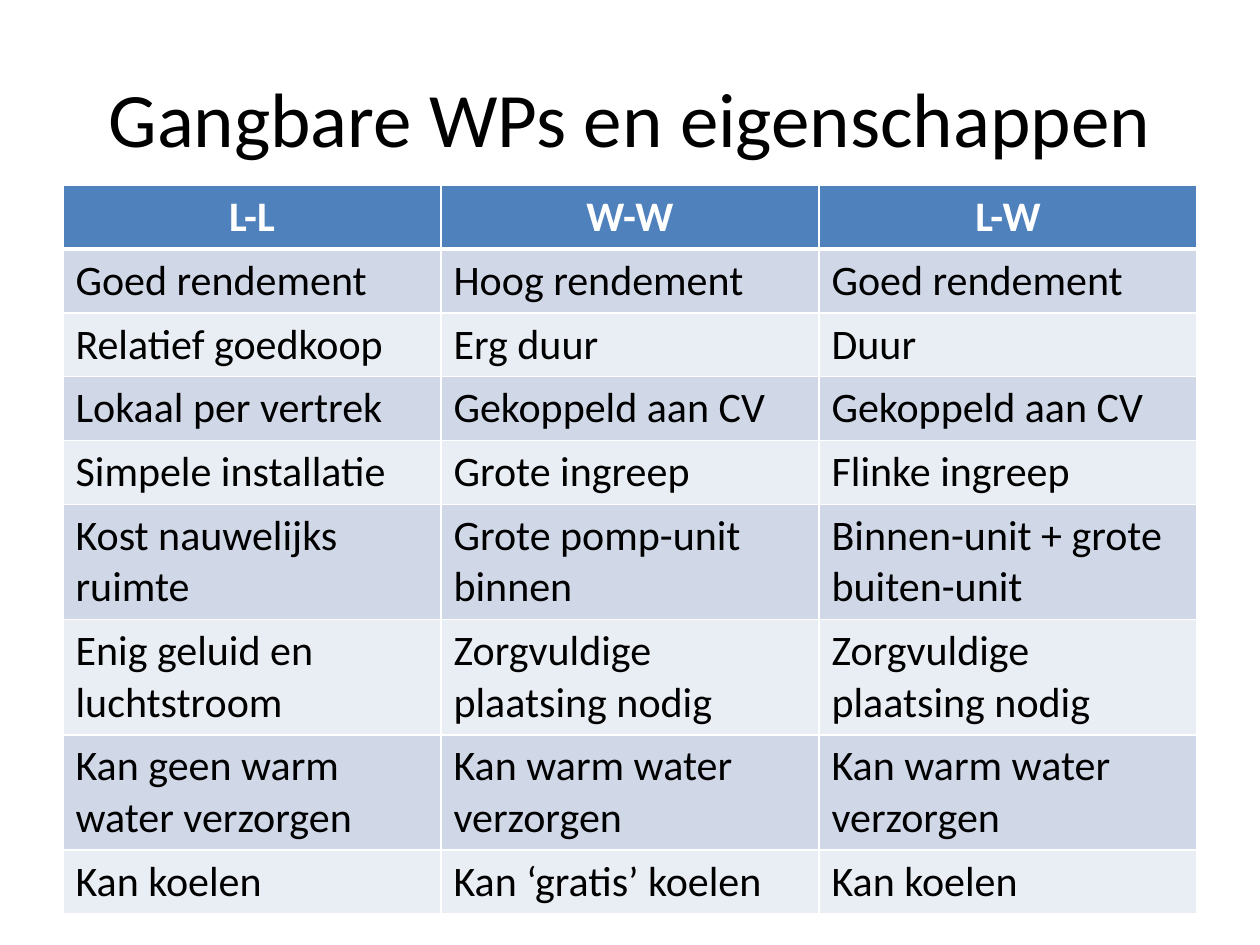
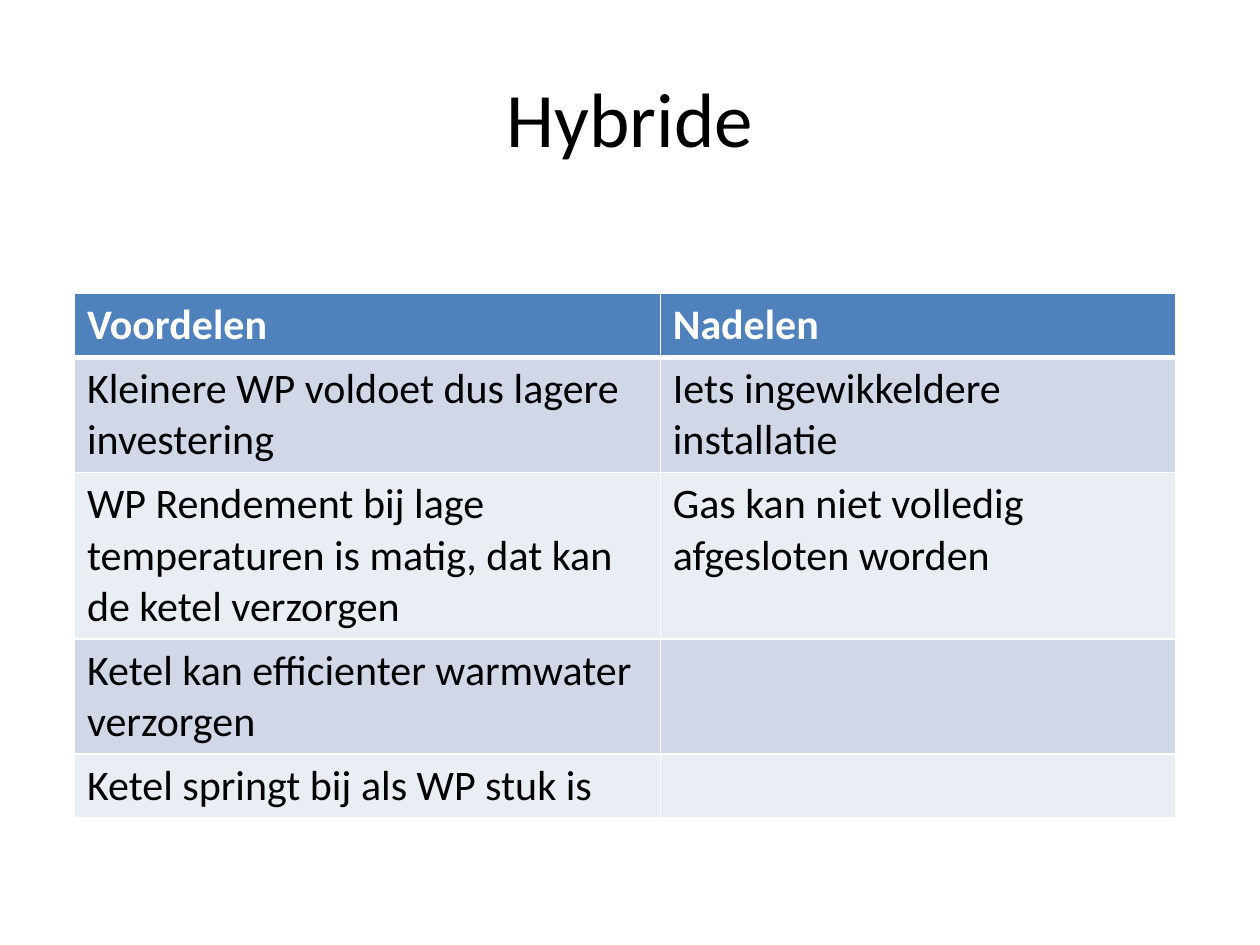
import pptx
import pptx.util
import pptx.dml.color
import pptx.enum.text
import pptx.oxml.ns
from lxml import etree

Cm, Pt = pptx.util.Cm, pptx.util.Pt
RGBColor = pptx.dml.color.RGBColor
PP_ALIGN, MSO_ANCHOR = pptx.enum.text.PP_ALIGN, pptx.enum.text.MSO_ANCHOR
qn = pptx.oxml.ns.qn

# Shared style
FONT = "Calibri"
BLACK = RGBColor(0x00, 0x00, 0x00)
WHITE = RGBColor(0xFF, 0xFF, 0xFF)
HEADER_BLUE = RGBColor(0x4F, 0x81, 0xBD)
BAND_DARK = RGBColor(0xD0, 0xD8, 0xE8)
BAND_LIGHT = RGBColor(0xE9, 0xED, 0xF4)
TITLE_BOX = (1.27, 0.76, 22.86, 3.18)
ROW_HEIGHT = 1.04  # minimum; rows grow with their text
THIN, THICK = 1, 3
TITLE_ONLY = 5

HEAT_PUMPS = [
    ("L-L", "W-W", "L-W"),
    ("Goed rendement", "Hoog rendement", "Goed rendement"),
    ("Relatief goedkoop", "Erg duur", "Duur"),
    ("Lokaal per vertrek", "Gekoppeld aan CV", "Gekoppeld aan CV"),
    ("Simpele installatie", "Grote ingreep", "Flinke ingreep"),
    ("Kost nauwelijks ruimte", "Grote pomp-unit binnen",
     "Binnen-unit + grote buiten-unit"),
    ("Enig geluid en luchtstroom", "Zorgvuldige plaatsing nodig",
     "Zorgvuldige plaatsing nodig"),
    ("Kan geen warm water verzorgen", "Kan warm water verzorgen",
     "Kan warm water verzorgen"),
    ("Kan koelen", "Kan ‘gratis’ koelen", "Kan koelen"),
]

HYBRID = [
    ("Voordelen", "Nadelen"),
    ("Kleinere WP voldoet dus lagere investering",
     "Iets ingewikkeldere installatie"),
    ("WP Rendement bij lage temperaturen is matig, dat kan de ketel verzorgen",
     "Gas kan niet volledig afgesloten worden"),
    ("Ketel kan efficienter warmwater verzorgen", ""),
    ("Ketel springt bij als WP stuk is", ""),
]


def add_run(p, text, size, color, bold=False):
    r = p.add_run()
    r.text = text
    r.font.name = FONT
    r.font.size = Pt(size)
    r.font.bold = bold
    r.font.color.rgb = color


def set_borders(cell, top, bottom):
    """White cell borders; they go in before the fill, as the schema asks."""
    tc_pr = cell._tc.get_or_add_tcPr()
    for side, width in (("L", THIN), ("R", THIN), ("T", top), ("B", bottom)):
        ln = etree.SubElement(tc_pr, qn(f"a:ln{side}"), w=str(Pt(width)))
        fill = etree.SubElement(ln, qn("a:solidFill"))
        etree.SubElement(fill, qn("a:srgbClr"), val=str(WHITE))


def add_title(s, text, box):
    title = s.shapes.title
    title.left, title.top, title.width, title.height = map(Cm, box)
    tf = title.text_frame
    tf.word_wrap = True
    tf.vertical_anchor = MSO_ANCHOR.MIDDLE
    p = tf.paragraphs[0]
    p.alignment = PP_ALIGN.CENTER
    add_run(p, text, 44, BLACK)


def add_banded_table(s, rows, left, top, col_widths, header_align):
    table = s.shapes.add_table(
        len(rows), len(col_widths), Cm(left), Cm(top),
        Cm(sum(col_widths)), Cm(ROW_HEIGHT * len(rows))).table
    for column, width in zip(table.columns, col_widths):
        column.width = Cm(width)
    for i, texts in enumerate(rows):
        table.rows[i].height = Cm(ROW_HEIGHT)
        header = i == 0
        band = HEADER_BLUE if header else BAND_DARK if i % 2 else BAND_LIGHT
        for j, text in enumerate(texts):
            cell = table.cell(i, j)
            set_borders(cell, THICK if i == 1 else THIN,
                        THICK if header else THIN)
            cell.fill.solid()
            cell.fill.fore_color.rgb = band
            p = cell.text_frame.paragraphs[0]
            p.alignment = header_align if header else PP_ALIGN.LEFT
            if text:
                add_run(p, text, 24, WHITE if header else BLACK, header)


def add_table_slide(prs, title, rows, left, top, col_widths,
                    header_align=PP_ALIGN.LEFT):
    s = prs.slides.add_slide(prs.slide_layouts[TITLE_ONLY])
    add_title(s, title, TITLE_BOX)
    add_banded_table(s, rows, left, top, col_widths, header_align)


def main():
    prs = pptx.Presentation()
    prs.slide_width, prs.slide_height = Cm(25.4), Cm(19.05)

    # Comparison of the common heat pumps
    add_table_slide(prs, "Gangbare WPs en eigenschappen", HEAT_PUMPS,
                    1.27, 3.73, [7.62] * 3, PP_ALIGN.CENTER)
    # Pros and cons of the hybrid system
    add_table_slide(prs, "Hybride", HYBRID, 1.5, 5.92, [11.81, 10.39])

    prs.save("out.pptx")


if __name__ == "__main__":
    main()
